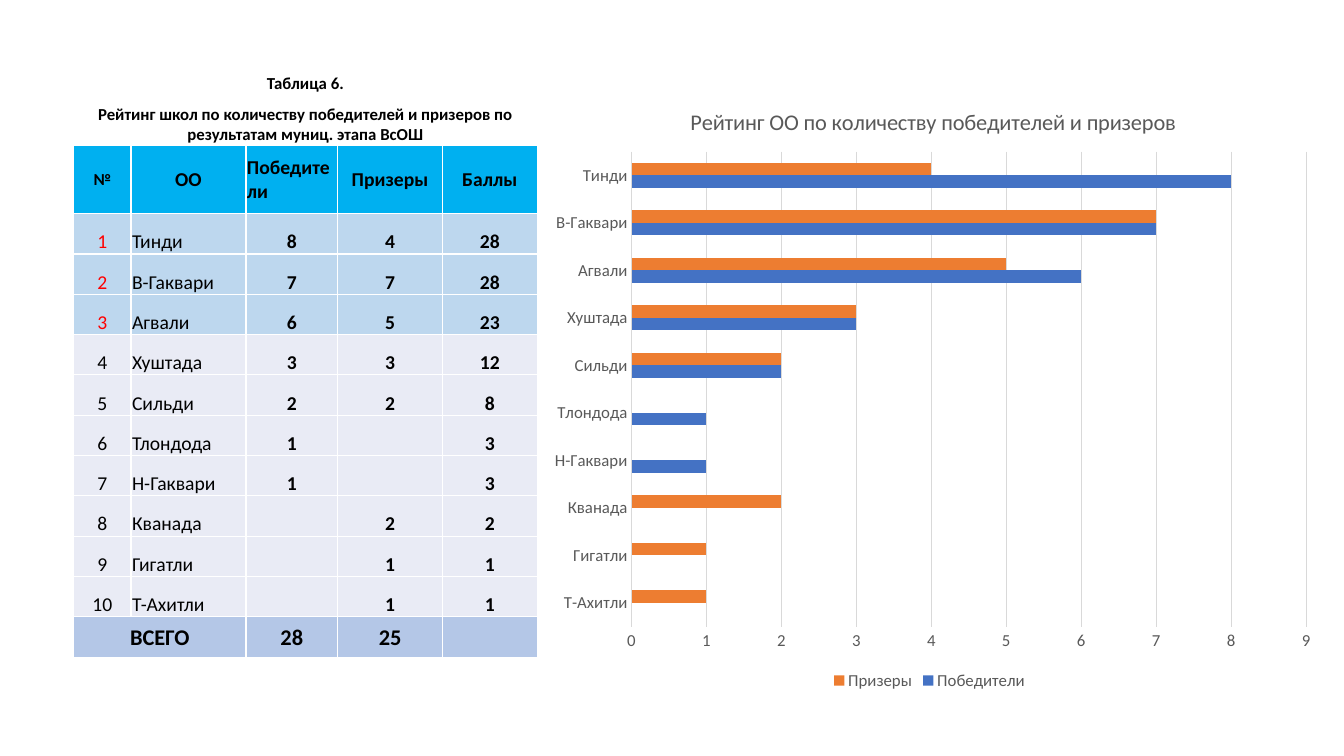
from lxml.etree import SubElement
from pptx import Presentation
from pptx.chart.data import CategoryChartData
from pptx.dml.color import RGBColor
from pptx.enum.chart import XL_CHART_TYPE, XL_LEGEND_POSITION, XL_TICK_MARK
from pptx.enum.text import MSO_ANCHOR, PP_ALIGN
from pptx.oxml import parse_xml
from pptx.oxml.ns import nsdecls, qn
from pptx.util import Inches, Pt

COLORS = {
    "text": "000000", "leader": "FF0000", "border": "FFFFFF",
    "header": "00B0F0", "top": "BDD7EE", "row": "E9EBF5", "total": "B4C7E7",
    "label": "595959", "grid": "D9D9D9",
    "winners": "4472C4", "prizes": "ED7D31",
}

# School, winners, prize-winners, points
SCHOOLS = [
    ("Тинди", 8, 4, 28),
    ("В-Гаквари", 7, 7, 28),
    ("Агвали", 6, 5, 23),
    ("Хуштада", 3, 3, 12),
    ("Сильди", 2, 2, 8),
    ("Тлондода", 1, None, 3),
    ("Н-Гаквари", 1, None, 3),
    ("Кванада", None, 2, 2),
    ("Гигатли", None, 1, 1),
    ("Т-Ахитли", None, 1, 1),
]
CAPTIONS = [
    "Таблица 6.",
    "Рейтинг школ по количеству победителей и призеров по результатам муниц. этапа ВсОШ",
]
HEADERS = ["№", "ОО", "Победители", "Призеры", "Баллы"]
COLUMN_WIDTHS = [0.57, 1.14, 0.91, 1.04, 0.94]
ROW_HEIGHTS = [0.32, 0.51, 0.68] + [0.4] * 11
LEADERS = 3


def color(name):
    return RGBColor.from_string(COLORS[name])


class RatingSlide:
    font = "Calibri"

    def __init__(self, slide):
        self.slide = slide

    def style_font(self, font, size, color_name, bold=False):
        font.name, font.size, font.bold = self.font, Pt(size), bold
        font.color.rgb = color(color_name)

    def cell(self, cell, value, fill=None, size=14, color_name="text", bold=True,
             align=PP_ALIGN.CENTER, anchor=MSO_ANCHOR.BOTTOM):
        cell.margin_left = cell.margin_right = cell.margin_top = Inches(0.01)
        cell.margin_bottom = 0
        cell.vertical_anchor = anchor
        properties = cell._tc.get_or_add_tcPr()
        for side in ("lnL", "lnR", "lnT", "lnB"):
            border = SubElement(properties, qn(f"a:{side}"), w=str(Pt(1)))
            paint = SubElement(border, qn("a:solidFill"))
            SubElement(paint, qn("a:srgbClr"), val=COLORS["border"])
        if fill:
            cell.fill.solid()
            cell.fill.fore_color.rgb = color(fill)
        else:
            cell.fill.background()
        if value is None:
            return
        cell.text_frame.text = str(value)
        paragraph = cell.text_frame.paragraphs[0]
        paragraph.alignment = align
        self.style_font(paragraph.runs[0].font, size, color_name, bold)

    def table(self, left, top):
        rating = self.slide.shapes.add_table(
            len(ROW_HEIGHTS), len(COLUMN_WIDTHS), Inches(left), Inches(top),
            Inches(sum(COLUMN_WIDTHS)), Inches(sum(ROW_HEIGHTS))).table
        for column, width in zip(rating.columns, COLUMN_WIDTHS):
            column.width = Inches(width)
        for row, height in zip(rating.rows, ROW_HEIGHTS):
            row.height = Inches(height)

        # Captions and column heads
        for row, caption in enumerate(CAPTIONS):
            rating.cell(row, 0).merge(rating.cell(row, 4))
            for column in range(5):
                self.cell(rating.cell(row, column), None if column else caption, size=12)
        for column, head in enumerate(HEADERS):
            self.cell(rating.cell(2, column), head, "header", 14 if column else 12,
                      align=PP_ALIGN.LEFT if column == 2 else PP_ALIGN.CENTER,
                      anchor=MSO_ANCHOR.MIDDLE)

        # Schools
        for place, school in enumerate(SCHOOLS, 1):
            leading = place <= LEADERS
            for column, value in enumerate((place, *school)):
                self.cell(rating.cell(place + 2, column), value,
                          "top" if leading else "row", bold=column > 1,
                          color_name="leader" if leading and column == 0 else "text",
                          align=PP_ALIGN.LEFT if column == 1 else PP_ALIGN.CENTER)

        # Totals
        last = len(ROW_HEIGHTS) - 1
        rating.cell(last, 0).merge(rating.cell(last, 1))
        for column, total in enumerate(("ВСЕГО", None, 28, 25, None)):
            self.cell(rating.cell(last, column), total, "total", 16,
                      anchor=MSO_ANCHOR.MIDDLE)

    def layout(self, **place):
        items = "".join(f'<c:{key} val="{value}"/>' for key, value in place.items())
        return parse_xml(f'<c:layout {nsdecls("c")}><c:manualLayout>{items}'
                         '</c:manualLayout></c:layout>')

    def chart(self, left, top, width, height):
        names, winners, prizes, _ = zip(*reversed(SCHOOLS))
        data = CategoryChartData()
        data.categories = names
        data.add_series("Победители", winners)
        data.add_series("Призеры", prizes)
        chart = self.slide.shapes.add_chart(
            XL_CHART_TYPE.BAR_CLUSTERED, Inches(left), Inches(top),
            Inches(width), Inches(height), data).chart
        self.style_font(chart.font, 10, "text")

        # Title
        heading = chart.chart_title.text_frame
        heading.text = "Рейтинг ОО по количеству победителей и призеров"
        self.style_font(heading.paragraphs[0].runs[0].font, 16, "label")
        title = chart.chart_title._element
        for old in title.findall(qn("c:layout")):
            title.remove(old)
        title.find(qn("c:tx")).addnext(
            self.layout(xMode="edge", yMode="edge", x=0.19, y=0.04))
        chart.chart_title.include_in_layout = False

        # Bars
        plot = chart.plots[0]
        plot.gap_width, plot.overlap, plot.vary_by_categories = 182, 0, False
        for series, name in zip(plot.series, ("winners", "prizes")):
            series.format.fill.solid()
            series.format.fill.fore_color.rgb = color(name)
            series.invert_if_negative = False

        # Axes
        for axis in (chart.category_axis, chart.value_axis):
            axis.major_tick_mark = axis.minor_tick_mark = XL_TICK_MARK.NONE
            self.style_font(axis.tick_labels.font, 12, "label")
        points = chart.value_axis
        points.minimum_scale, points.maximum_scale, points.major_unit = 0, 9, 1
        points.has_major_gridlines = True
        points.format.line.fill.background()
        for line in (chart.category_axis.format.line, points.major_gridlines.format.line):
            line.color.rgb = color("grid")
            line.width = Pt(0.75)

        # Legend and plot area
        chart.has_legend = True
        chart.legend.position = XL_LEGEND_POSITION.BOTTOM
        chart.legend.include_in_layout = False
        self.style_font(chart.legend.font, 12, "label")
        area = chart._chartSpace.chart.plotArea
        for old in area.findall(qn("c:layout")):
            area.remove(old)
        area.insert(0, self.layout(layoutTarget="inner", xMode="edge", yMode="edge",
                                   x=0.12, y=0.12, w=0.86, h=0.77))


def main():
    presentation = Presentation()
    presentation.slide_width, presentation.slide_height = Inches(13.33), Inches(7.5)
    rating = RatingSlide(presentation.slides.add_slide(presentation.slide_layouts[6]))
    rating.chart(5.33, 0.77, 7.78, 6.12)
    rating.table(0.73, 0.61)
    presentation.save("out.pptx")


if __name__ == "__main__":
    main()
